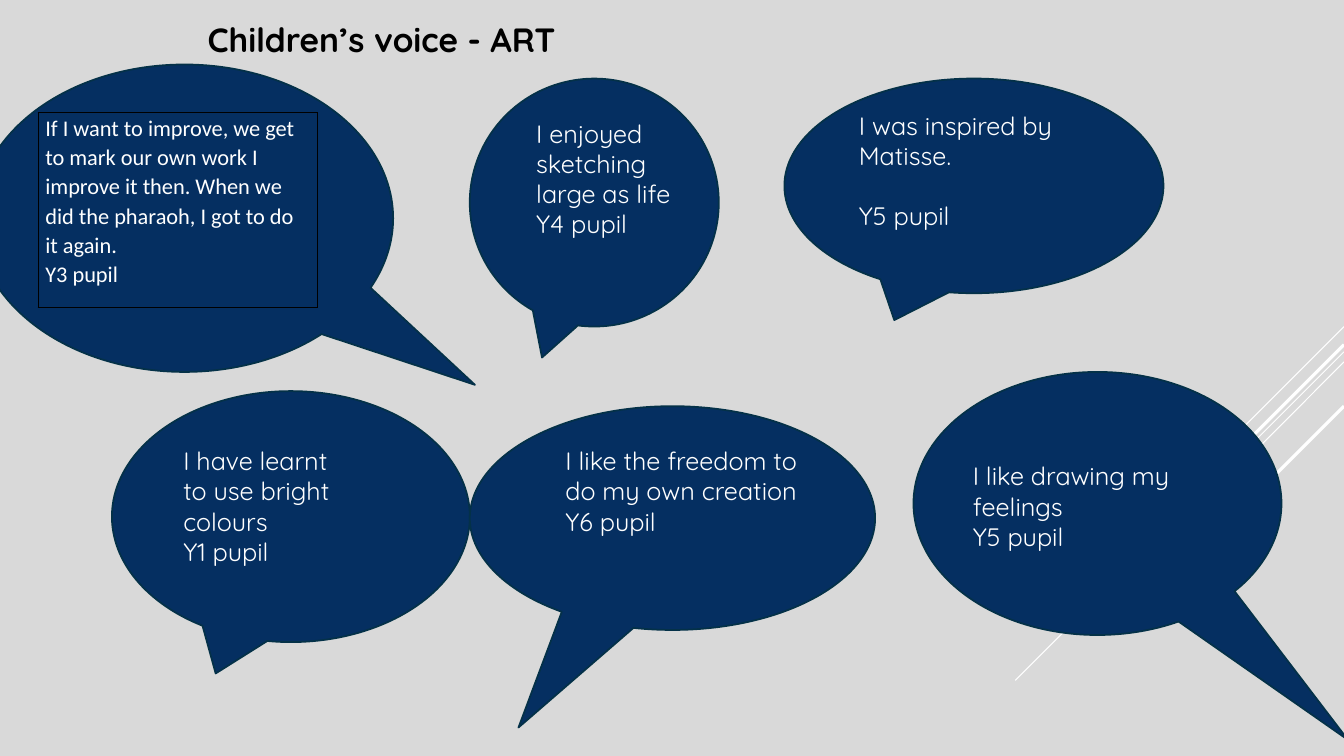
from dataclasses import dataclass

from lxml import etree
from pptx import Presentation
from pptx.dml.color import RGBColor
from pptx.enum.shapes import MSO_CONNECTOR, MSO_SHAPE
from pptx.enum.text import MSO_AUTO_SIZE
from pptx.oxml import parse_xml
from pptx.oxml.ns import nsdecls, qn
from pptx.slide import Slide
from pptx.text.text import TextFrame
from pptx.util import Inches, Pt

STRAIGHT = MSO_CONNECTOR.STRAIGHT
SPEECH_BUBBLE = MSO_SHAPE.OVAL_CALLOUT
GROW = MSO_AUTO_SIZE.SHAPE_TO_FIT_TEXT

GREY, NAVY, DARK_TEAL = "D9D9D9", "052F61", "043148"
WHITE, BLACK = "FFFFFF", "000000"
HEADING_FONT, TABLE_FONT = "Quicksand", "Calibri"

Box = tuple[float, float, float, float]


@dataclass
class Ray:
    start: tuple[float, float]
    end: tuple[float, float]
    width: float


@dataclass
class Bubble:
    box: Box
    tail: tuple[float, float] = (-0.21, 0.625)


@dataclass
class Quote:
    box: Box
    words: str
    pupil: str
    gap: float = 0


RAYS = [
    Ray((13.33, 3.24), (12.33, 4.24), 0.75),
    Ray((13.33, 3.49), (10.07, 6.75), 0.75),
    Ray((13.33, 3.59), (11.26, 5.67), 0.75),
    Ray((13.33, 3.42), (11.42, 5.33), 2.25),
    Ray((13.33, 4.03), (11.94, 5.42), 2.25),
]
BUBBLES = [
    Bubble((-0.24, 0.64, 4.14, 3.05), (0.696, 0.542)),
    Bubble((7.78, 0.78, 3.76, 2.13)),
    Bubble((1.11, 3.88, 3.55, 2.49)),
    Bubble((9.06, 3.69, 3.65, 2.61), (0.681, 0.899)),
    Bubble((4.66, 0.78, 2.47, 2.46)),
    Bubble((4.66, 4.03, 4.02, 2.22), (-0.38, 0.936)),
]
QUOTES = [
    Quote((8.42, 1.04, 2.88, 1.31), "I was inspired by Matisse.", "Y5 pupil", 21.6),
    Quote((1.72, 4.37, 1.84, 1.31), "I have learnt to use bright colours", "Y1 pupil"),
    Quote((9.55, 4.52, 2.62, 1.01), "I like drawing my feelings", "Y5 pupil"),
    Quote((5.22, 1.12, 1.63, 1.31), "I enjoyed sketching large as life", "Y4 pupil"),
    Quote((5.51, 4.37, 2.7, 1.01), "I like the freedom to do my own creation", "Y6 pupil"),
]
TABLE_QUOTE = Quote(
    (0.38, 1.12, 2.77, 1.93),
    "If I want to improve, we get to mark our own work I improve it then. "
    "When we did the pharaoh, I got to do it again.",
    "Y3 pupil",
)


def color(value: str) -> RGBColor:
    return RGBColor.from_string(value)


def inches(box: Box) -> list[Inches]:
    return [Inches(length) for length in box]


def write(frame: TextFrame, lines: list[str], font: str, size: float,
          ink: str, bold: bool = False) -> None:
    frame.text = "\n".join(lines)
    for paragraph in frame.paragraphs:
        for run in paragraph.runs:
            run.font.name = font
            run.font.size = Pt(size)
            run.font.bold = bold
            run.font.color.rgb = color(ink)


def add_text(slide: Slide, box: Box, lines: list[str], size: float,
             ink: str, bold: bool = False) -> TextFrame:
    frame = slide.shapes.add_textbox(*inches(box)).text_frame
    frame.word_wrap = True
    frame.auto_size = GROW
    write(frame, lines, HEADING_FONT, size, ink, bold)
    return frame


def add_ray(slide: Slide, ray: Ray) -> None:
    connector = slide.shapes.add_connector(
        STRAIGHT, *[Inches(length) for length in ray.start + ray.end])
    connector.line.color.rgb = color(WHITE)
    connector.line.width = Pt(ray.width)
    etree.SubElement(connector._element.spPr, qn("a:effectLst"))


def add_bubble(slide: Slide, bubble: Bubble) -> None:
    shape = slide.shapes.add_shape(SPEECH_BUBBLE, *inches(bubble.box))
    shape.shadow.inherit = False
    shape.adjustments[0], shape.adjustments[1] = bubble.tail
    shape.fill.solid()
    shape.fill.fore_color.rgb = color(NAVY)
    shape.line.color.rgb = color(DARK_TEAL)
    shape.line.width = Pt(1.25)


def add_quote(slide: Slide, quote: Quote) -> None:
    frame = add_text(slide, quote.box, [quote.words, quote.pupil], 18, WHITE)
    frame.paragraphs[1].space_before = Pt(quote.gap)


def add_table_quote(slide: Slide, quote: Quote) -> None:
    table = slide.shapes.add_table(1, 1, *inches(quote.box)).table
    table.first_row = table.horz_banding = False
    cell = table.cell(0, 0)
    cell.margin_left = cell.margin_right = Inches(0.07)
    cell.margin_top = cell.margin_bottom = 0
    write(cell.text_frame, [quote.words, quote.pupil], TABLE_FONT, 16, WHITE)
    for paragraph in cell.text_frame.paragraphs:
        paragraph.line_spacing = 1.07
    cell.fill.background()
    # Borders come before the fill in the cell properties
    properties = cell._tc.get_or_add_tcPr()
    for position, side in enumerate("LRTB"):
        properties.insert(position, parse_xml(
            f'<a:ln{side} {nsdecls("a")} w="{Pt(1)}"><a:solidFill>'
            f'<a:srgbClr val="{BLACK}"/></a:solidFill></a:ln{side}>'))


def main() -> None:
    presentation = Presentation()
    presentation.slide_width = Inches(13.33)
    presentation.slide_height = Inches(7.5)
    slide = presentation.slides.add_slide(presentation.slide_layouts[6])
    slide.background.fill.solid()
    slide.background.fill.fore_color.rgb = color(GREY)

    # Diagonal rays at the right edge
    for ray in RAYS:
        add_ray(slide, ray)

    # Title
    add_text(slide, (1.96, 0.14, 7.99, 0.5), ["Children’s voice - ART"], 24, BLACK, True)

    # Speech bubbles and what the children say in them
    for bubble in BUBBLES:
        add_bubble(slide, bubble)
    add_table_quote(slide, TABLE_QUOTE)
    for quote in QUOTES:
        add_quote(slide, quote)

    presentation.save("out.pptx")


if __name__ == "__main__":
    main()
